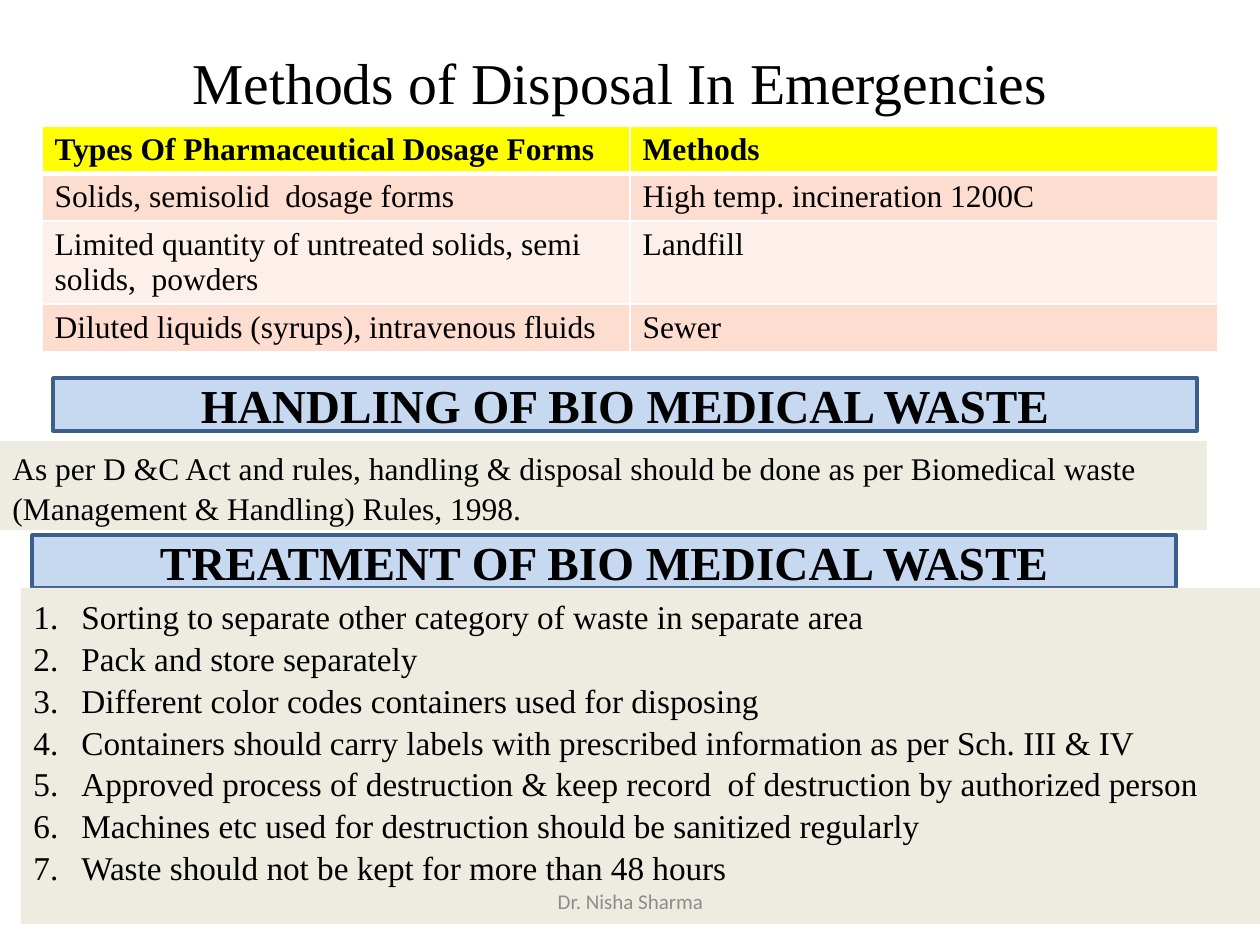
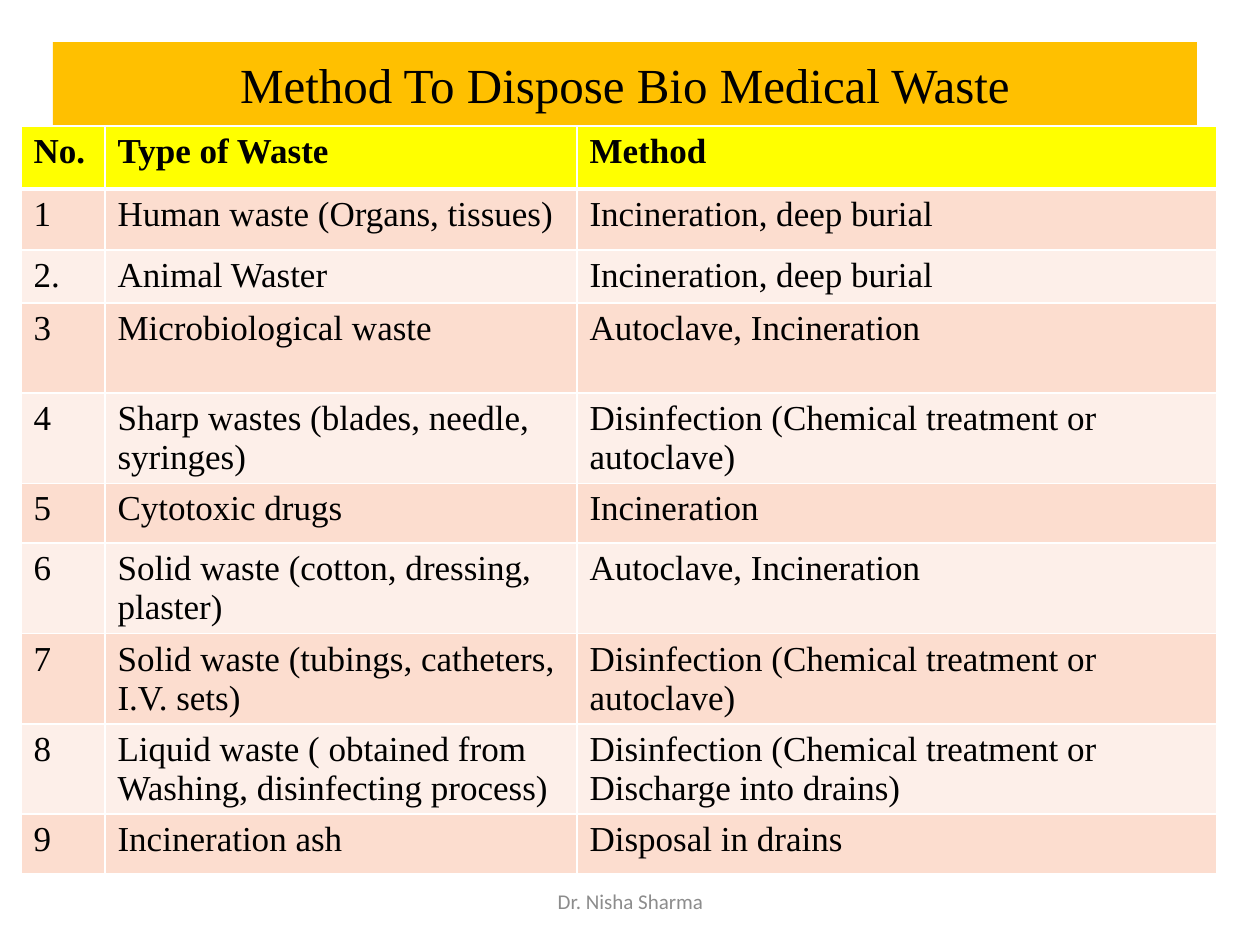
from lxml.etree import SubElement
from pptx import Presentation
from pptx.dml.color import RGBColor
from pptx.enum.shapes import MSO_SHAPE as Preset
from pptx.enum.text import MSO_ANCHOR as Anchor, PP_ALIGN as Align
from pptx.oxml.ns import qn
from pptx.util import Emu, Pt

PX = 914400 / 126
SERIF, SANS = "Times New Roman", "Calibri"
COLOURS = {
    "text": "000000", "footer": "8C8C8C", "border": "FFFFFF",
    "header": "FFFF00", "odd_row": "FCDDCF", "even_row": "FDEFE9",
    "band": "C6D9F1", "band_line": "3A5F8C", "panel": "EEECE1", "title": "FFC000",
}
RGB = {name: RGBColor.from_string(value) for name, value in COLOURS.items()}
TITLE_TOP = 42
BAND = {"size": 27, "fill": "band", "line": "band_line", "bold": True}
PANEL = {"fill": "panel", "align": Align.LEFT, "anchor": Anchor.TOP, "spacing": 1.05}
FOOTER = {"size": 12, "font": SANS, "colour": "footer"}


def add_block(page, place, lines, size, fill=None, line=None, bold=False, font=SERIF,
              colour="text", align=Align.CENTER, anchor=Anchor.MIDDLE, spacing=None):
    box = page.shapes.add_shape(Preset.RECTANGLE, *[Emu(round(n * PX)) for n in place])
    box.shadow.inherit = False
    if fill:
        box.fill.solid()
        box.fill.fore_color.rgb = RGB[fill]
    else:
        box.fill.background()
    if line:
        box.line.color.rgb = RGB[line]
        box.line.width = Pt(2)
    else:
        box.line.fill.background()
    frame = box.text_frame
    frame.word_wrap = True
    frame.vertical_anchor = anchor
    frame.text = "\n".join(lines)
    for para in frame.paragraphs:
        para.alignment = align
        para.line_spacing = spacing
        para.font.size = Pt(size)
        para.font.name = font
        para.font.bold = bold
        para.font.color.rgb = RGB[colour]
    return box


def add_grid(page, left, top, widths, heights, rows, size):
    place = [Emu(round(n * PX)) for n in (left, top, sum(widths), sum(heights))]
    table = page.shapes.add_table(len(rows), len(widths), *place).table
    for column, width in zip(table.columns, widths):
        column.width = Emu(round(width * PX))
    for number, (row, height, texts) in enumerate(zip(table.rows, heights, rows)):
        row.height = Emu(round(height * PX))
        fill = "header" if number == 0 else "odd_row" if number % 2 else "even_row"
        for cell, text in zip(row.cells, texts):
            cell.text = text
            span = cell.text_frame.paragraphs[0].runs[0]
            span.font.size = Pt(size)
            span.font.name = SERIF
            span.font.bold = number == 0
            span.font.color.rgb = RGB["text"]
            properties = cell._tc.get_or_add_tcPr()
            for side in ("lnL", "lnR", "lnT", "lnB"):
                thick = (number, side) in ((0, "lnB"), (1, "lnT"))
                edge = SubElement(properties, qn(f"a:{side}"), w=str(Pt(3 if thick else 1)))
                paint = SubElement(edge, qn("a:solidFill"))
                SubElement(paint, qn("a:srgbClr"), val=COLOURS["border"])
            cell.fill.solid()
            cell.fill.fore_color.rgb = RGB[fill]


deck = Presentation()
deck.slide_width = Emu(round(1260 * PX))
deck.slide_height = Emu(round(945 * PX))
blank = deck.slide_layouts[6]

emergencies = deck.slides.add_slide(blank)
add_block(emergencies, (53, TITLE_TOP, 1134, 79), ["Methods of Disposal In Emergencies"], 33)
dosage_rows = [
    ("Types Of Pharmaceutical Dosage Forms", "Methods"),
    ("Solids, semisolid  dosage forms", "High temp. incineration 1200C"),
    ("Limited quantity of untreated solids, semi solids,  powders", "Landfill"),
    ("Diluted liquids (syrups), intravenous fluids", "Sewer"),
]
add_grid(emergencies, 42, 126, (588, 588), (47, 47, 83, 47), dosage_rows, 18)
add_block(emergencies, (53, 378, 1144, 53), ["HANDLING OF BIO MEDICAL WASTE"], **BAND)
add_block(emergencies, (0, 441, 1207, 89), [
    "As per D &C Act and rules, handling & disposal should be done as per "
    "Biomedical waste (Management & Handling) Rules, 1998.",
], 18, **PANEL)
add_block(emergencies, (32, 535, 1144, 53), ["TREATMENT OF BIO MEDICAL WASTE"], **BAND)
treatment_steps = [
    "Sorting to separate other category of waste in separate area",
    "Pack and store separately",
    "Different color codes containers used for disposing",
    "Containers should carry labels with prescribed information as per Sch. III & IV",
    "Approved process of destruction & keep record  of destruction by authorized person",
    "Machines etc used for destruction should be sanitized regularly",
    "Waste should not be kept for more than 48 hours",
]
steps = add_block(emergencies, (21, 588, 1239, 336), treatment_steps, 19, **PANEL)
indent = round(48 * PX)
for para in steps.text_frame.paragraphs:
    properties = para._p.get_or_add_pPr()
    properties.set("marL", str(indent))
    properties.set("indent", str(-indent))
    bullet = properties.makeelement(qn("a:buAutoNum"), {"type": "arabicPeriod"})
    properties.find(qn("a:defRPr")).addprevious(bullet)

disposal = deck.slides.add_slide(blank)
add_block(disposal, (53, TITLE_TOP, 1144, 84), ["Method To Dispose Bio Medical Waste"], 28, "title")
waste_rows = [
    ("No.", "Type of Waste", "Method"),
    ("1", "Human waste (Organs, tissues)", "Incineration, deep burial"),
    ("2.", "Animal Waster", "Incineration, deep burial"),
    ("3", "Microbiological waste", "Autoclave, Incineration"),
    ("4", "Sharp wastes (blades, needle, syringes)", "Disinfection (Chemical treatment or autoclave)"),
    ("5", "Cytotoxic drugs", "Incineration"),
    ("6", "Solid waste (cotton, dressing, plaster)", "Autoclave, Incineration"),
    ("7", "Solid waste (tubings, catheters, I.V. sets)", "Disinfection (Chemical treatment or autoclave)"),
    ("8", "Liquid waste ( obtained from Washing, disinfecting process)",
     "Disinfection (Chemical treatment or Discharge into drains)"),
    ("9", "Incineration ash", "Disposal in drains"),
]
waste_heights = (63, 61, 53, 90, 90, 60, 90, 90, 90, 60)
add_grid(disposal, 21, 126, (84, 472, 640), waste_heights, waste_rows, 20)

for page in deck.slides:
    add_block(page, (431, 876, 399, 50), ["Dr. Nisha Sharma"], **FOOTER)

deck.save("out.pptx")
